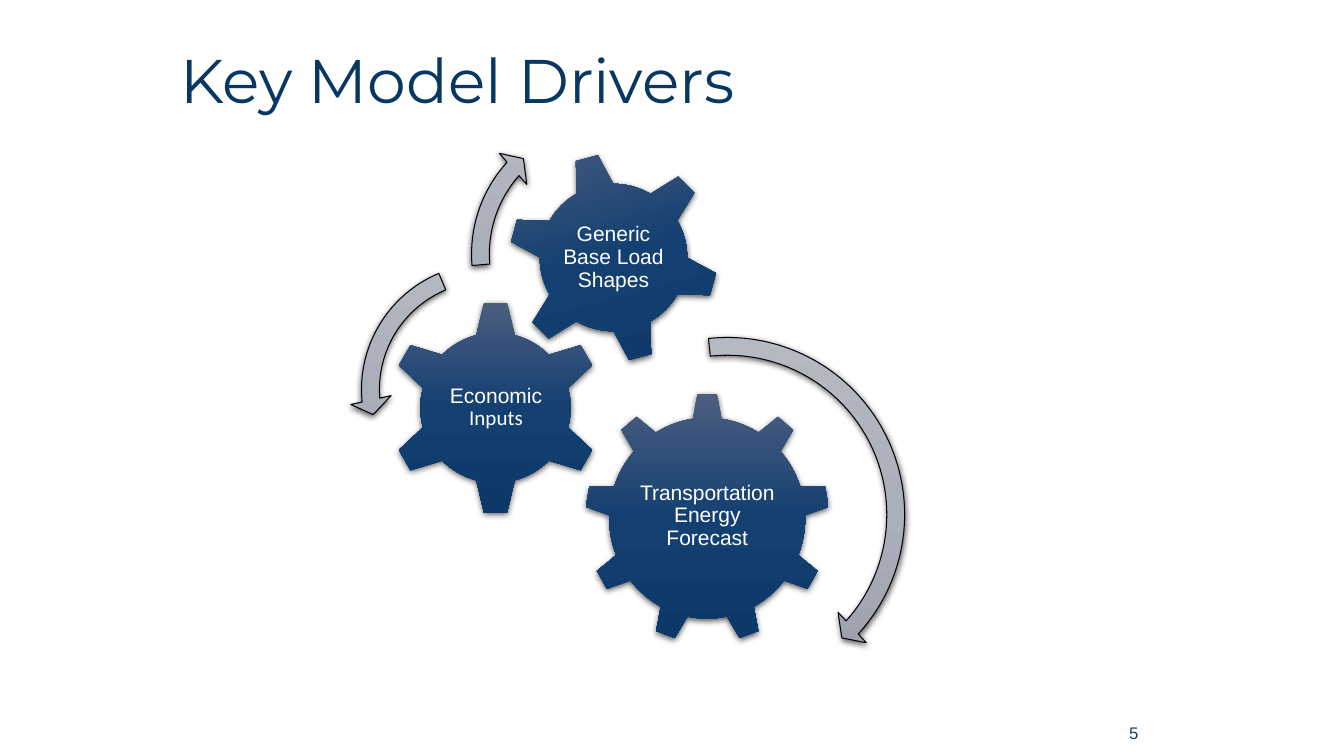
from lxml import etree
from pptx import Presentation
from pptx.dml.color import RGBColor
from pptx.enum import shapes, text
from pptx.oxml import ns
from pptx.util import Inches, Pt

KIND = shapes.MSO_SHAPE
MID = text.MSO_ANCHOR.MIDDLE
ALIGN = text.PP_ALIGN
NAVY = ["4D5E80", "134071", "0D3969"]
GREY = ["B5B9C2", "ABAFBB", "979CA7"]

TITLE = " Key Model Drivers"
GEARS = [
    (KIND.GEAR_9, (5.8, 3.9, 2.43, 2.48), 0, (6.29, 4.48, 1.45, 1.28),
     [("Transportation Energy Forecast", "Arial")]),
    (KIND.GEAR_6, (3.85, 2.98, 2.13, 2.13), 0, (4.39, 3.52, 1.06, 1.05),
     [("Economic", "Arial"), (" Inputs", "Calibri")]),
    (KIND.GEAR_6, (5.04, 1.51, 2.09, 2.09), 345, (5.5, 1.97, 1.17, 1.17),
     [("Generic Base Load Shapes", "Arial")]),
]
ARROWS = [
    (KIND.CIRCULAR_ARROW, (5.34, 3.23, 3.75, 3.75),
     (0.047, 2.99, 25.304, 158.31, 0.055)),
    (KIND.LEFT_CIRCULAR_ARROW, (3.47, 2.5, 2.73, 2.73),
     (0.065, 4.3, 104.891, 148.378, 0.075)),
    (KIND.CIRCULAR_ARROW, (4.56, 1.05, 2.94, 2.94),
     (0.06, 3.941, 133.138, 105.082, 0.07)),
]


def color(code):
    return RGBColor.from_string(code)


def place(box):
    return [Inches(n) for n in box]


def node(parent, tag, **attrs):
    return etree.SubElement(parent, ns.qn(tag), attrs)


def style(font, size, code, name=None):
    font.size = Pt(size)
    font.color.rgb = color(code)
    if name:
        font.name = name


def add_part(slide, kind, box, tones):
    part = slide.shapes.add_shape(kind, *place(box))
    part.fill.gradient()
    part.fill.gradient_angle = 270
    props = part.element.spPr
    stops = props.find(ns.qn("a:gradFill")).find(ns.qn("a:gsLst"))
    for stop in list(stops):
        stops.remove(stop)
    for i, tone in enumerate(tones):
        stop = node(stops, "a:gs", pos=str(i * 50000))
        node(stop, "a:srgbClr", val=tone)
    part.shadow.inherit = False
    shade = node(props.find(ns.qn("a:effectLst")), "a:outerShdw",
                 blurRad=str(Pt(4.5)), dist=str(Pt(1.5)),
                 dir="5400000", rotWithShape="0")
    node(node(shade, "a:srgbClr", val="000000"), "a:alpha", val="63000")
    return part


def add_text(slide, box, runs, size, code, align, inset=None):
    frame = slide.shapes.add_textbox(*place(box)).text_frame
    frame.word_wrap = True
    frame.vertical_anchor = MID
    if inset is not None:
        frame.margin_left = frame.margin_right = Inches(inset)
        frame.margin_top = frame.margin_bottom = Inches(inset)
    para = frame.paragraphs[0]
    para.alignment = align
    style(para.font, size, code)
    for words, name in runs:
        run = para.add_run()
        run.text = words
        style(run.font, size, code, name)
    return para


def main():
    deck = Presentation()
    deck.slide_width, deck.slide_height = Inches(13.33), Inches(7.5)
    slide = deck.slides.add_slide(deck.slide_layouts[5])

    title = slide.shapes.title
    title.left, title.top, title.width, title.height = place(
        (1.53, 0.26, 10.89, 1.14))
    title.text_frame.text = TITLE
    title.text_frame.vertical_anchor = MID
    para = title.text_frame.paragraphs[0]
    para.alignment = ALIGN.LEFT
    para.line_spacing = 0.9
    style(para.font, 44, "083763", "Montserrat")

    add_text(slide, (9.42, 7.07, 1.97, 0.4), [("5", "Arial")],
             12, "17406D", ALIGN.RIGHT)

    for kind, box, turn, area, runs in GEARS:
        gear = add_part(slide, kind, box, NAVY)
        gear.rotation = turn
        gear.line.fill.background()
        label = add_text(slide, area, runs, 15, "FFFFFF", ALIGN.CENTER, 0.02)
        label.line_spacing = 0.9

    for kind, box, bends in ARROWS:
        arrow = add_part(slide, kind, box, GREY)
        for i, bend in enumerate(bends):
            arrow.adjustments[i] = bend
        arrow.line.color.rgb = color("000000")
        arrow.line.width = Pt(0.75)

    deck.save("out.pptx")


if __name__ == "__main__":
    main()
